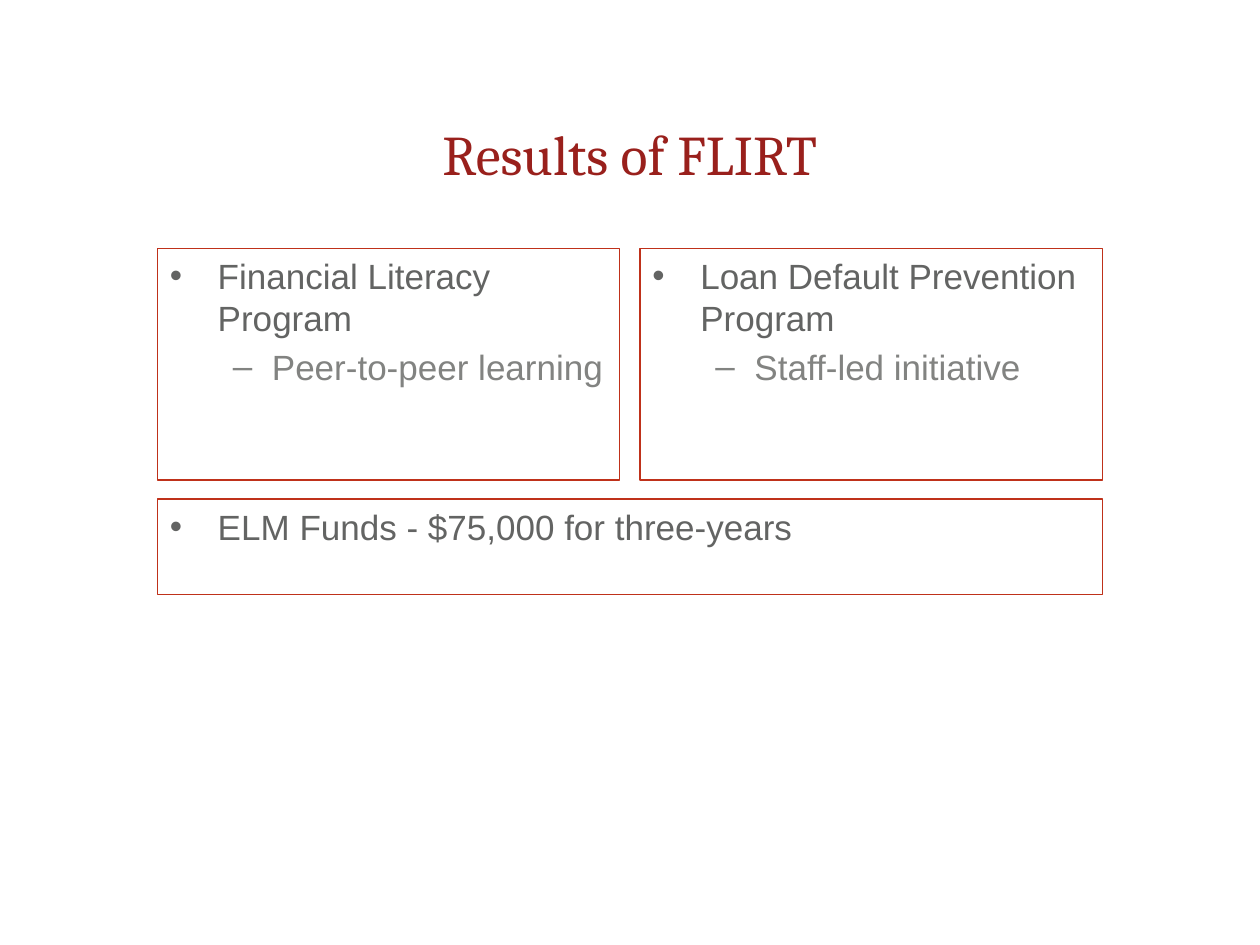
from lxml import etree
from pptx import Presentation
from pptx import util as u
from pptx.dml.color import RGBColor
from pptx.enum import shapes, text
from pptx.oxml.ns import qn

RED = RGBColor(0x99, 0x20, 0x1C)
RUST = RGBColor(0xBF, 0x31, 0x1A)
DARK = RGBColor(0x63, 0x64, 0x63)
GRAY = RGBColor(0x82, 0x83, 0x81)
LEFT, WIDTH, GAP = 1.25, 7.5, 0.16
HALF = (WIDTH - GAP) / 2
LEVELS = [("•", 0.38, 0.38, DARK), ("–", 0.81, 0.31, GRAY)]


def style(para, name, size, color):
    """Set the font of a paragraph's runs."""
    for run in para.runs:
        run.font.name = name
        run.font.size = u.Pt(size)
        run.font.color.rgb = color


def add_title(slide, words):
    """Add the centred slide title."""
    box = slide.shapes.add_textbox(
        u.Inches(LEFT), u.Inches(0.77), u.Inches(WIDTH), u.Inches(0.89))
    frame = box.text_frame
    frame.word_wrap = True
    frame.vertical_anchor = text.MSO_ANCHOR.MIDDLE
    para = frame.paragraphs[0]
    para.text = words
    para.alignment = text.PP_ALIGN.CENTER
    style(para, "Cambria", 32, RED)


def add_item(para, words, level):
    """Fill a paragraph as a bullet of the given level."""
    mark, margin, hang, color = LEVELS[level]
    para.text = words
    para.level = level
    para.alignment = text.PP_ALIGN.LEFT
    props = para._p.get_or_add_pPr()
    props.set("marL", str(u.Inches(margin)))
    props.set("indent", str(-u.Inches(hang)))
    etree.SubElement(props, qn("a:buFont")).set("typeface", "Arial")
    etree.SubElement(props, qn("a:buChar")).set("char", mark)
    style(para, "Arial", 20, color)


def add_panel(slide, left, top, width, height, items):
    """Add an outlined box with one bullet per level."""
    panel = slide.shapes.add_shape(
        shapes.MSO_SHAPE.RECTANGLE, u.Inches(left), u.Inches(top),
        u.Inches(width), u.Inches(height))
    panel.shadow.inherit = False
    panel.fill.background()
    panel.line.color.rgb = RUST
    panel.line.width = u.Pt(0.75)
    frame = panel.text_frame
    frame.word_wrap = True
    frame.vertical_anchor = text.MSO_ANCHOR.TOP
    for level, words in enumerate(items):
        para = frame.add_paragraph() if level else frame.paragraphs[0]
        if level:
            para.space_before = u.Pt(4)
        add_item(para, words, level)


def main():
    """Build and save the slide."""
    deck = Presentation()
    deck.slide_width, deck.slide_height = u.Inches(10), u.Inches(7.5)
    slide = deck.slides.add_slide(deck.slide_layouts[6])
    add_title(slide, "Results of FLIRT")
    programs = [
        ("Financial Literacy Program", "Peer-to-peer learning"),
        ("Loan Default Prevention Program", "Staff-led initiative"),
    ]
    for col, items in enumerate(programs):
        add_panel(slide, LEFT + col * (HALF + GAP), 1.97, HALF, 1.84, items)
    add_panel(slide, LEFT, 3.96, WIDTH, 0.76,
              ["ELM Funds - $75,000 for three-years"])
    deck.save("out.pptx")


if __name__ == "__main__":
    main()
